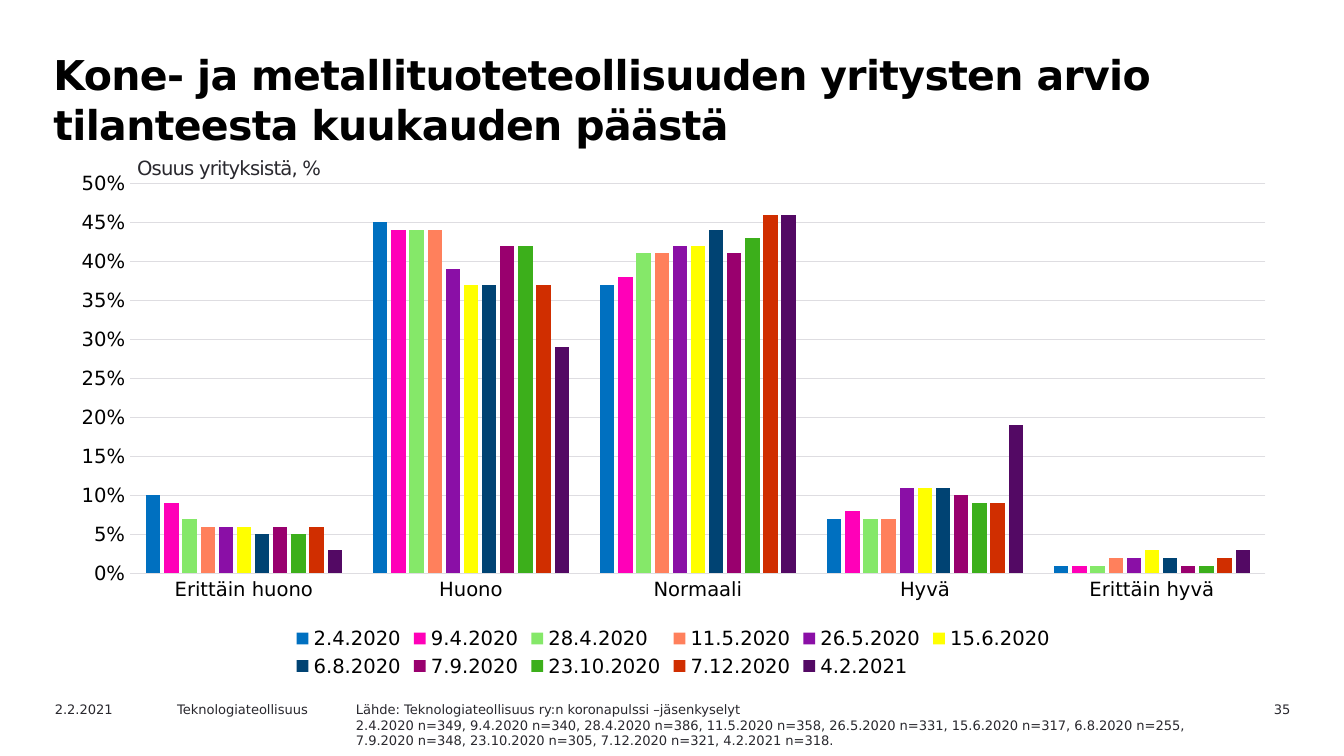
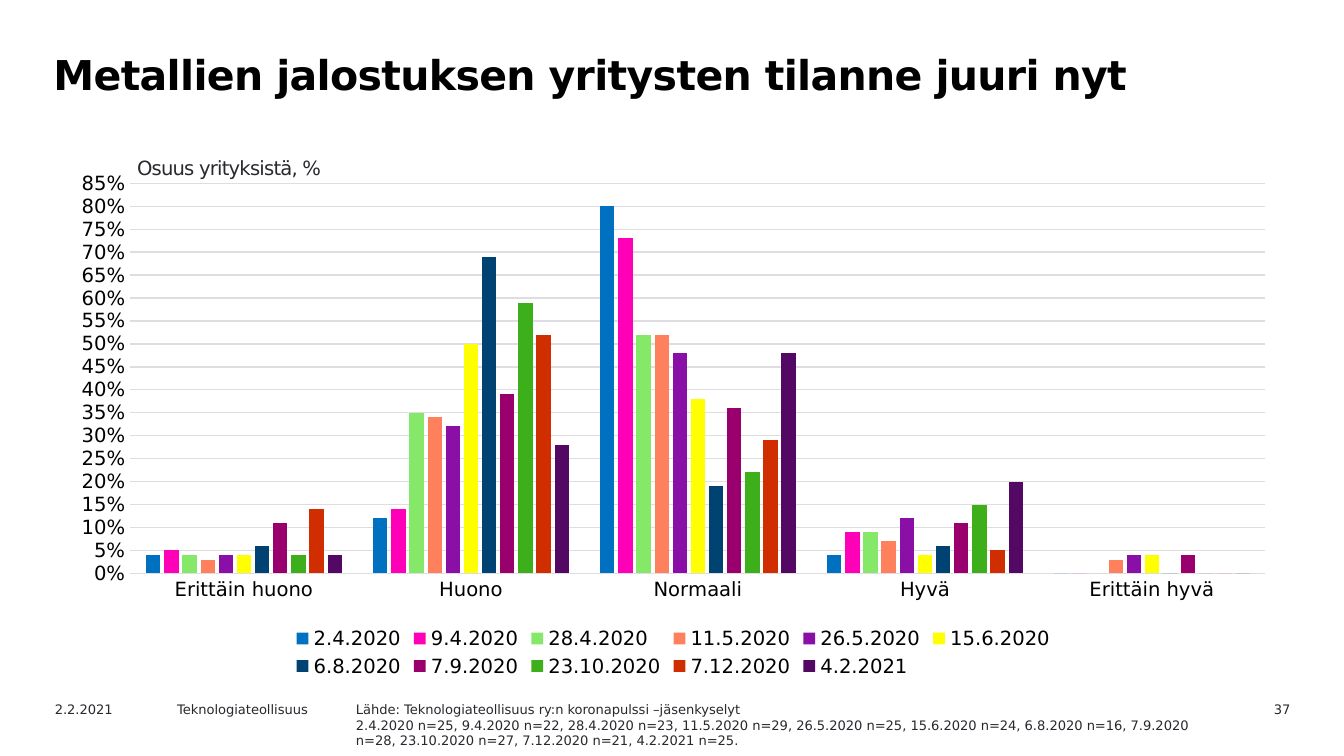
from lxml import etree
from pptx import Presentation
from pptx.chart.data import CategoryChartData
from pptx.dml.color import RGBColor
from pptx.enum.chart import XL_CHART_TYPE, XL_LEGEND_POSITION, XL_TICK_MARK
from pptx.enum.text import PP_ALIGN
from pptx.oxml.ns import qn
from pptx.util import Inches, Pt

# Shared look
FONT = "DejaVu Sans"
BLACK, GREY, GRID = "000000", "29282E", "DEDDE1"
TITLE = dict(size=22, color=BLACK, bold=True, spacing=-33, line=27, indent=0.02)
FOOTER = dict(size=7, color=GREY)
UNIT = dict(size=10.5, color=GREY, spacing=-40, inset=0.04)

# Shared content
CATEGORIES = ["Erittäin huono", "Huono", "Normaali", "Hyvä", "Erittäin hyvä"]
SURVEYS = [
    ("2.4.2020", "0070C0"), ("9.4.2020", "FF00B8"), ("28.4.2020", "85E869"),
    ("11.5.2020", "FF805C"), ("26.5.2020", "8A0FA6"), ("15.6.2020", "FFFF00"),
    ("6.8.2020", "004373"), ("7.9.2020", "99006E"), ("23.10.2020", "3CAF1B"),
    ("7.12.2020", "D02E00"), ("4.2.2021", "530964"),
]
SOURCE = "Lähde: Teknologiateollisuus ry:n koronapulssi –jäsenkyselyt"

# One dict per slide; shares are in percent, one row per survey
SLIDES = [
    dict(
        title="Kone- ja metallituoteteollisuuden yritysten arvio tilanteesta kuukauden päästä",
        number="35", top=0.5, source_width=6.78,
        answers=[349, 340, 386, 358, 331, 317, 255, 348, 305, 321, 318],
        shares=[
            (10, 45, 37, 7, 1), (9, 44, 38, 8, 1), (7, 44, 41, 7, 1),
            (6, 44, 41, 7, 2), (6, 39, 42, 11, 2), (6, 37, 42, 11, 3),
            (5, 37, 44, 11, 2), (6, 42, 41, 10, 1), (5, 42, 43, 9, 1),
            (6, 37, 46, 9, 2), (3, 29, 46, 19, 3),
        ],
    ),
    dict(
        title="Metallien jalostuksen yritysten tilanne juuri nyt",
        number="37", top=0.85, source_width=6.46,
        answers=[25, 22, 23, 29, 25, 24, 16, 28, 27, 21, 25],
        shares=[
            (4, 12, 80, 4, 0), (5, 14, 73, 9, 0), (4, 35, 52, 9, 0),
            (3, 34, 52, 7, 3), (4, 32, 48, 12, 4), (4, 50, 38, 4, 4),
            (6, 69, 19, 6, 0), (11, 39, 36, 11, 4), (4, 59, 22, 15, 0),
            (14, 52, 29, 5, 0), (4, 28, 48, 20, 0),
        ],
    ),
]


def rgb(color):
    return RGBColor.from_string(color)


def set_font(font, size, color, bold=False):
    for name, value in dict(name=FONT, size=Pt(size), bold=bold).items():
        setattr(font, name, value)
    font.color.rgb = rgb(color)


def add_text(s, box, lines, size, color, bold=False, spacing=0, line=None,
             indent=0, inset=None, align=PP_ALIGN.LEFT):
    tf = s.shapes.add_textbox(*map(Inches, box)).text_frame
    tf.word_wrap = True
    if inset is not None:
        for side in ("left", "top", "right", "bottom"):
            setattr(tf, f"margin_{side}", Inches(inset))
    for i, text in enumerate(lines):
        p = tf.add_paragraph() if i else tf.paragraphs[0]
        p.alignment = align
        if line:
            p.line_spacing = Pt(line)
        if indent:
            p._p.get_or_add_pPr().set("marL", str(Inches(indent)))
        r = p.add_run()
        r.text = text
        set_font(r.font, size, color, bold)
        if spacing:
            r.font._element.set("spc", str(spacing))


def place_plot(chart, **place):
    """Fix the inner plot area, as fractions of the chart."""
    area = chart._chartSpace.chart.plotArea
    for old in area.findall(qn("c:layout")):
        area.remove(old)
    layout = etree.Element(qn("c:layout"))
    area.insert(0, layout)
    manual = etree.SubElement(layout, qn("c:manualLayout"))
    parts = dict(layoutTarget="inner", xMode="edge", yMode="edge", **place)
    for tag, value in parts.items():
        etree.SubElement(manual, qn(f"c:{tag}")).set("val", str(value))


def add_survey_chart(s, shares, top):
    data = CategoryChartData(number_format="0%")
    data.categories = CATEGORIES
    for (date, _), row in zip(SURVEYS, shares):
        data.add_series(date, [share / 100 for share in row])
    box = map(Inches, (0.42, 1.21, 9.18, 3.87))
    chart = s.shapes.add_chart(XL_CHART_TYPE.COLUMN_CLUSTERED, *box, data).chart
    set_font(chart.font, 10, GREY)
    chart.has_title = False

    # Columns
    plot = chart.plots[0]
    for name, value in dict(gap_width=219, overlap=-27, vary_by_categories=False).items():
        setattr(plot, name, value)
    for series, (_, color) in zip(plot.series, SURVEYS):
        series.invert_if_negative = False
        series.format.fill.solid()
        series.format.fill.fore_color.rgb = rgb(color)

    # Axes
    cat, val = chart.category_axis, chart.value_axis
    for axis in (cat, val):
        axis.major_tick_mark = axis.minor_tick_mark = XL_TICK_MARK.NONE
        set_font(axis.tick_labels.font, 10.5, BLACK)
    for name, value in dict(minimum_scale=0, maximum_scale=top, major_unit=0.05,
                            has_major_gridlines=True).items():
        setattr(val, name, value)
    val.tick_labels.number_format = "0%"
    val.tick_labels.number_format_is_linked = False
    val.format.line.fill.background()
    for line in (cat.format.line, val.major_gridlines.format.line):
        line.color.rgb = rgb(GRID)
        line.width = Pt(0.75)

    # Legend
    chart.has_legend = True
    chart.legend.position = XL_LEGEND_POSITION.BOTTOM
    chart.legend.include_in_layout = False
    set_font(chart.legend.font, 10.5, BLACK)
    place_plot(chart, x=0.06, y=0.04, w=0.92, h=0.75)


def add_survey_slide(prs, title, number, top, source_width, answers, shares):
    s = prs.slides.add_slide(prs.slide_layouts[6])
    add_text(s, (0.28, 0.31, 8.74, 0.71), [title], **TITLE)

    # Footer
    add_text(s, (8.76, 5.17, 0.94, 0.18), [number], align=PP_ALIGN.RIGHT, **FOOTER)
    add_text(s, (0.31, 5.17, 1, 0.18), ["2.2.2021"], **FOOTER)
    add_text(s, (1.22, 5.17, 1.42, 0.18), ["Teknologiateollisuus"], **FOOTER)

    add_survey_chart(s, shares, top)

    # Source with the number of answers to each survey
    counts = ", ".join(f"{date} n={n}" for (date, _), n in zip(SURVEYS, answers))
    add_text(s, (2.55, 5.17, source_width, 0.4), [SOURCE, counts + "."], **FOOTER)
    add_text(s, (0.98, 1.12, 3.39, 0.26), ["Osuus yrityksistä, %"], **UNIT)


def main():
    prs = Presentation()
    # Widescreen, 16:9
    prs.slide_width = Inches(10)
    prs.slide_height = prs.slide_width * 9 // 16
    for content in SLIDES:
        add_survey_slide(prs, **content)
    prs.save("out.pptx")


if __name__ == "__main__":
    main()
